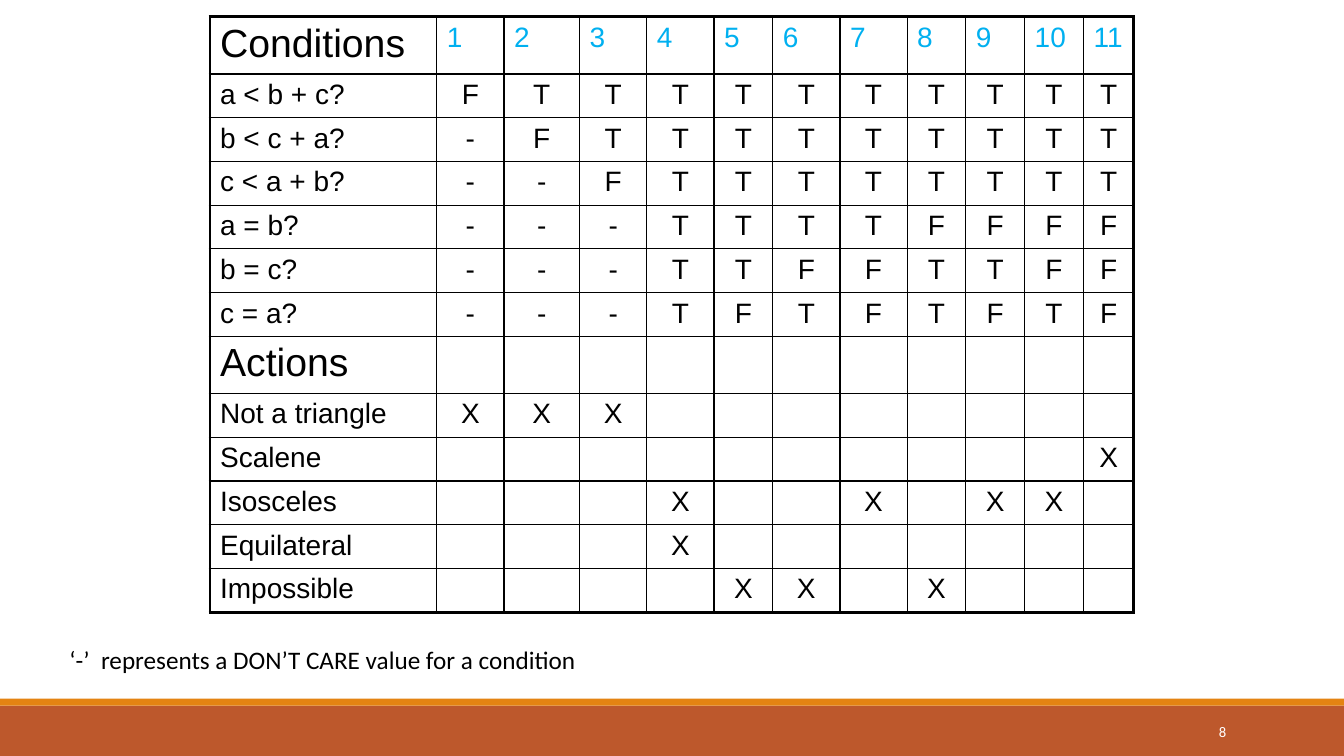
from lxml.etree import SubElement
from pptx import Presentation
from pptx.dml.color import RGBColor
from pptx.enum.shapes import MSO_SHAPE as Preset
from pptx.enum.text import MSO_ANCHOR as Anchor, MSO_AUTO_SIZE as AutoSize, PP_ALIGN as Align
from pptx.oxml.ns import qn
from pptx.util import Pt

COLORS = {
    "ink": "000000",
    "rule_number": "00B0F0",
    "band": "BD582C",
    "stripe": "E48312",
    "page_number": "FFFFFF",
}
RULE_COUNT = 11
COLUMN_WIDTHS = [162, 48, 54, 48, 48, 42, 48, 48, 42, 42, 42, 36]
SECTION_HEIGHT, ROW_HEIGHT = 40.8, 31.2
SECTIONS = ("Conditions", "Actions")
DECISION_ROWS = [
    ("Conditions", range(1, RULE_COUNT + 1)),
    ("a < b + c?", "FTTTTTTTTTT"),
    ("b < c + a?", "-FTTTTTTTTT"),
    ("c < a + b?", "--FTTTTTTTT"),
    ("a = b?", "---TTTTFFFF"),
    ("b = c?", "---TTFFTTFF"),
    ("c = a?", "---TFTFTFTF"),
    ("Actions", ""),
    ("Not a triangle", "XXX"),
    ("Scalene", "          X"),
    ("Isosceles", "   X  X XX "),
    ("Equilateral", "   X"),
    ("Impossible", "    XX X"),
]


def style_paragraph(para, size, font, color, align=Align.LEFT):
    para.alignment = align
    para.font.size = Pt(size)
    para.font.name = font
    para.font.color.rgb = RGBColor.from_string(COLORS[color])


def add_borders(cell, widths):
    properties = cell._tc.get_or_add_tcPr()
    for side, width in widths.items():
        line = SubElement(properties, qn(f"a:ln{side}"), w=str(Pt(width)))
        fill = SubElement(line, qn("a:solidFill"))
        SubElement(fill, qn("a:srgbClr"), val=COLORS["ink"])


def add_decision_table(page, left, top):
    heights = [SECTION_HEIGHT if label in SECTIONS else ROW_HEIGHT
               for label, marks in DECISION_ROWS]
    last_row, last_column = len(heights) - 1, RULE_COUNT
    table = page.shapes.add_table(
        len(heights), RULE_COUNT + 1, Pt(left), Pt(top),
        Pt(sum(COLUMN_WIDTHS)), Pt(sum(heights))).table
    table.first_row = table.horz_banding = False
    for column, width in zip(table.columns, COLUMN_WIDTHS):
        column.width = Pt(width)
    for i, (label, marks) in enumerate(DECISION_ROWS):
        table.rows[i].height = Pt(heights[i])
        values = [label, *marks]
        values += [""] * (RULE_COUNT + 1 - len(values))
        for j, value in enumerate(values):
            cell = table.cell(i, j)
            cell.text = str(value).strip()
            style_paragraph(
                cell.text_frame.paragraphs[0],
                28 if value in SECTIONS else 20, "Arial",
                "rule_number" if i == 0 and j else "ink",
                Align.CENTER if i and j else Align.LEFT)
            outer = {"L": j == 0, "R": j == last_column,
                     "T": i == 0, "B": i == last_row}
            add_borders(cell, {side: 2.25 if edge else 1
                               for side, edge in outer.items()})
            cell.fill.background()


def add_text(page, box, text, size, color, align=Align.LEFT, anchor=Anchor.TOP):
    frame = page.shapes.add_textbox(*map(Pt, box)).text_frame
    frame.word_wrap = True
    frame.vertical_anchor = anchor
    frame.text = text
    style_paragraph(frame.paragraphs[0], size, "Calibri", color, align)
    return frame


def add_footer(page, top, width, height):
    stripe_height = 5
    for color, y, band_height in (("band", top, height),
                                  ("stripe", top - stripe_height, stripe_height)):
        band = page.shapes.add_shape(
            Preset.RECTANGLE, Pt(0), Pt(y), Pt(width), Pt(band_height))
        band.shadow.inherit = False
        band.fill.solid()
        band.fill.fore_color.rgb = RGBColor.from_string(COLORS[color])
        band.line.fill.background()
    add_text(page, (width - 180, top + 4.5, 103, 28.8), "8", 10.5,
             "page_number", Align.RIGHT, Anchor.MIDDLE)


def main():
    deck = Presentation()
    deck.slide_width, deck.slide_height = Pt(960), Pt(540)
    page = deck.slides.add_slide(deck.slide_layouts[6])
    add_footer(page, 504, 960, 36)
    add_decision_table(page, 150, 12)
    note = add_text(page, (42.5, 456.5, 840, 29),
                    "‘-’  represents a DON’T CARE value for a condition", 18, "ink")
    note.auto_size = AutoSize.SHAPE_TO_FIT_TEXT
    deck.save("out.pptx")


if __name__ == "__main__":
    main()
